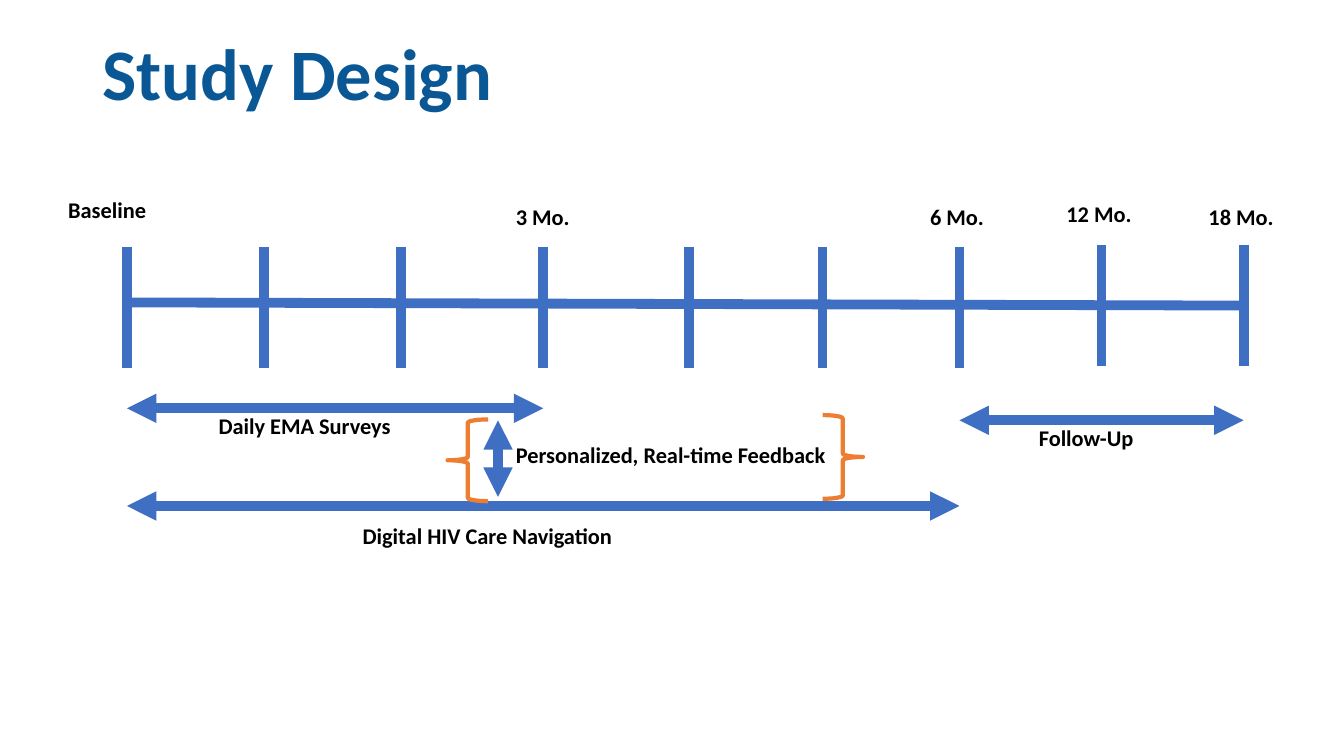
from lxml.etree import SubElement
from pptx import Presentation
from pptx.dml.color import RGBColor
from pptx.enum.shapes import MSO_CONNECTOR as Connector, MSO_SHAPE as Preset
from pptx.enum.text import MSO_ANCHOR as Anchor, PP_ALIGN as Align
from pptx.oxml.ns import qn
from pptx.util import Cm, Pt

COLORS = {"title": "095895", "timeline": "3F6FC3", "brace": "ED7D31", "label": "000000"}


class StudySlide:
    font_name = "Calibri"
    label_size = 16
    line_width = 7
    brace_width = 3

    def __init__(self, presentation):
        self.slide = presentation.slides.add_slide(presentation.slide_layouts[6])

    def text(self, words, left, top, width, height=0.91, size=label_size,
             color="label", align=Align.LEFT, anchor=Anchor.TOP):
        shape = self.slide.shapes.add_textbox(Cm(left), Cm(top), Cm(width), Cm(height))
        frame = shape.text_frame
        frame.word_wrap = True
        frame.vertical_anchor = anchor
        frame.text = words
        paragraph = frame.paragraphs[0]
        paragraph.alignment = align
        font = paragraph.runs[0].font
        font.name = self.font_name
        font.size = Pt(size)
        font.bold = True
        font.color.rgb = RGBColor.from_string(COLORS[color])
        return paragraph

    def line(self, start_x, start_y, end_x, end_y, arrows=False):
        connector = self.slide.shapes.add_connector(
            Connector.STRAIGHT, Cm(start_x), Cm(start_y), Cm(end_x), Cm(end_y))
        connector.line.width = Pt(self.line_width)
        connector.line.color.rgb = RGBColor.from_string(COLORS["timeline"])
        properties = connector._element.spPr
        if arrows:
            outline = properties.find(qn("a:ln"))
            for end in ("a:headEnd", "a:tailEnd"):
                SubElement(outline, qn(end), type="triangle")
        SubElement(properties, qn("a:effectLst"))

    def brace(self, preset, left, top, width, height):
        shape = self.slide.shapes.add_shape(preset, Cm(left), Cm(top), Cm(width), Cm(height))
        shape.shadow.inherit = False
        shape.fill.background()
        shape.line.width = Pt(self.brace_width)
        shape.line.color.rgb = RGBColor.from_string(COLORS["brace"])


def main():
    presentation = Presentation()
    presentation.slide_width = Cm(33.87)
    presentation.slide_height = Cm(19.05)
    study = StudySlide(presentation)

    title = study.text("Study Design", 2.33, 0.79, 29.21, 2.31, 51.8, "title",
                       anchor=Anchor.MIDDLE)
    title.line_spacing = 0.9

    baseline, month_3, month_6, month_12, month_18 = 3.2, 13.69, 24.18, 27.76, 31.34
    tick_height = 3.05
    study.line(12.55, 10.59, 12.55, 12.52, arrows=True)
    study.line(month_18, 7.7, baseline, 7.62)
    for x in (baseline, 6.65, 10.11, month_3, 17.37, 20.73, month_6):
        study.line(x, 6.22, x, 6.22 + tick_height)
    for x in (month_12, month_18):
        study.line(x, 6.17, x, 6.17 + tick_height)

    for start, end, y in ((baseline, month_3, 10.29), (baseline, month_6, 12.75),
                          (month_6, month_18, 10.59)):
        study.line(start, y, end, y, arrows=True)

    month_width = 2.82
    for words, x, top in (("6 Mo. ", month_6, 5), ("12 Mo. ", month_12, 4.93),
                          ("18 Mo. ", month_18, 5)):
        study.text(words, x - month_width / 2, top, month_width, align=Align.CENTER)

    for words, left, top, width in (
            ("Baseline", 1.47, 4.83, 3.02),
            ("3 Mo.", 12.75, 5, 2.31),
            ("Daily EMA Surveys", 5.26, 10.26, 5.99),
            ("Digital HIV Care Navigation", 8.89, 13.03, 8.97),
            ("Follow-Up", 25.93, 10.57, 3.68),
            ("Personalized, Real-time Feedback", 12.75, 11, 10.57)):
        study.text(words, left, top, width)

    study.brace(Preset.RIGHT_BRACE, 20.73, 10.46, 1.02, 2.11)
    study.brace(Preset.LEFT_BRACE, 11.28, 10.57, 1.02, 2.06)

    presentation.save("out.pptx")


if __name__ == "__main__":
    main()
